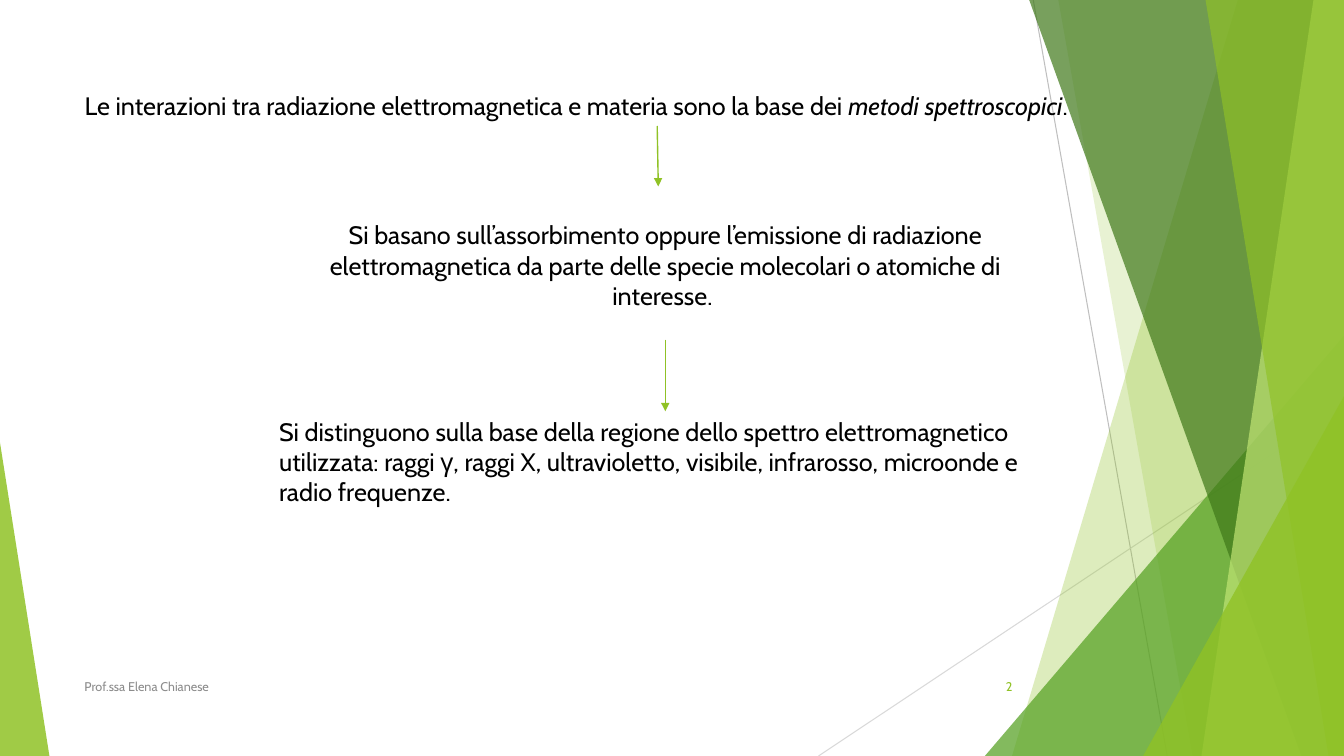
from lxml import etree
from pptx import Presentation
from pptx.dml.color import RGBColor
from pptx.enum.shapes import MSO_CONNECTOR, MSO_SHAPE
from pptx.enum.text import MSO_ANCHOR, MSO_AUTO_SIZE, PP_ALIGN
from pptx.oxml.ns import qn
from pptx.util import Inches, Pt

STRAIGHT = MSO_CONNECTOR.STRAIGHT
TRIANGLE = MSO_SHAPE.ISOSCELES_TRIANGLE
TOP, MIDDLE = MSO_ANCHOR.TOP, MSO_ANCHOR.MIDDLE
LEFT, CENTER, RIGHT = PP_ALIGN.LEFT, PP_ALIGN.CENTER, PP_ALIGN.RIGHT
NO_AUTOFIT = MSO_AUTO_SIZE.NONE

FONT = "Cabin"
COLORS = {
    "text": "000000", "footer": "8C8C8C", "green": "90C226",
    "leaf": "54A021", "forest": "3F7819", "lime": "C0E474",
    "grey": "BFBFBF", "pale grey": "D9D9D9",
}
WIDTH, HEIGHT = Inches(13.333), Inches(7.5)
TITLE_ONLY = 5


# Positions are percentages of the slide's width and height
def across(percent):
    return round(WIDTH * percent / 100)


def down(percent):
    return round(HEIGHT * percent / 100)


def color(name):
    return RGBColor.from_string(COLORS[name])


def fill_translucent(shape, name, opacity):
    shape.shadow.inherit = False
    shape.fill.solid()
    shape.fill.fore_color.rgb = color(name)
    shape.line.fill.background()
    color_element = shape.fill._xPr.find(qn("a:solidFill"))[0]
    etree.SubElement(color_element, qn("a:alpha"), val=str(opacity * 1000))


def add_line(slide, start, end, name, weight, arrow=False):
    connector = slide.shapes.add_connector(
        STRAIGHT, across(start[0]), down(start[1]), across(end[0]), down(end[1]))
    connector.line.color.rgb = color(name)
    connector.line.width = Pt(weight)
    if arrow:
        etree.SubElement(connector.line._get_or_add_ln(), qn("a:tailEnd"), type="triangle")
    etree.SubElement(connector._element.spPr, qn("a:effectLst"))


def add_facet(slide, top_x, bottom_x, name, opacity):
    """Full-height band between a slanted edge and the right slide edge."""
    builder = slide.shapes.build_freeform(across(top_x), 0)
    builder.add_line_segments(
        [(WIDTH, 0), (WIDTH, HEIGHT), (across(bottom_x), HEIGHT)], close=True)
    fill_translucent(builder.convert_to_shape(), name, opacity)


def add_corner(slide, left, top, right, apex, name, opacity):
    """Right triangle standing on the bottom edge, apex 0 left or 1 right."""
    shape = slide.shapes.add_shape(
        TRIANGLE, across(left), down(top), across(right - left), down(100 - top))
    shape.adjustments[0] = apex
    fill_translucent(shape, name, opacity)


def add_decoration(slide):
    add_line(slide, (76.88, 0), (86.85, 100), "grey", 0.75)
    add_line(slide, (100, 53.73), (60.9, 100), "pale grey", 0.75)
    add_facet(slide, 92.1, 75.3, "green", 30)
    add_facet(slide, 78.75, 88.73, "green", 20)
    add_corner(slide, 73.28, 44.4, 100, 1, "leaf", 72)
    add_facet(slide, 76.58, 96.83, "forest", 70)
    add_facet(slide, 97.73, 89.4, "lime", 70)
    add_facet(slide, 89.7, 98.85, "green", 65)
    add_corner(slide, 85.05, 52.4, 100, 1, "green", 80)
    add_corner(slide, 0, 58.53, 3.68, 0, "green", 85)


def write_text(shape, runs, size, name, align=LEFT, anchor=TOP):
    """Write (text, italic) runs as one paragraph."""
    frame = shape.text_frame
    frame.word_wrap = True
    frame.auto_size = NO_AUTOFIT
    frame.vertical_anchor = anchor
    paragraph = frame.paragraphs[0]
    paragraph.alignment = align
    paragraph.font.name = FONT
    paragraph.font.size = Pt(size)
    paragraph.font.color.rgb = color(name)
    for text, italic in runs:
        run = paragraph.add_run()
        run.text = text
        if italic:
            run.font.italic = True


def add_text(slide, box, text, size, name, align=LEFT, anchor=TOP):
    left, top, width, height = box
    shape = slide.shapes.add_textbox(across(left), down(top), across(width), down(height))
    write_text(shape, [(text, False)], size, name, align, anchor)


def add_footer(slide, top, height):
    add_text(slide, (5.55, top, 51.68, height), "Prof.ssa Elena Chianese",
             9, "footer", anchor=MIDDLE)
    add_text(slide, (70.43, top, 5.63, height), "2", 9, "green", RIGHT, MIDDLE)


def place_title(slide, box):
    left, top, width, height = box
    title = slide.shapes.title
    title.left, title.top = across(left), down(top)
    title.width, title.height = across(width), down(height)
    write_text(title, [
        ("Le interazioni tra radiazione elettromagnetica e materia sono la base dei ", False),
        ("metodi spettroscopici", True),
        (".", False),
    ], 18, "text")
    # Bring the title in front of the decoration
    slide.shapes._spTree.append(title._element)


def add_flow(slide):
    place_title(slide, (5.55, 11.33, 89.4, 5.33))
    add_line(slide, (48.9, 16.67), (48.98, 24.67), "green", 1, arrow=True)
    add_text(slide, (22.43, 28.4, 54.15, 13.47),
             "Si basano sull’assorbimento oppure l’emissione di radiazione "
             "elettromagnetica da parte delle specie molecolari o atomiche di interesse. ",
             18, "text", CENTER)
    add_line(slide, (49.5, 44.93), (49.5, 54.4), "green", 1, arrow=True)
    add_text(slide, (20.03, 54.4, 60.68, 13.47),
             "Si distinguono sulla base della regione dello spettro elettromagnetico "
             "utilizzata: raggi γ, raggi X, ultravioletto, visibile, infrarosso, "
             "microonde e radio frequenze.", 18, "text")


def main():
    presentation = Presentation()
    presentation.slide_width, presentation.slide_height = WIDTH, HEIGHT
    slide = presentation.slides.add_slide(presentation.slide_layouts[TITLE_ONLY])
    add_decoration(slide)
    add_footer(slide, 88.13, 5.33)
    add_flow(slide)
    presentation.save("out.pptx")


if __name__ == "__main__":
    main()
